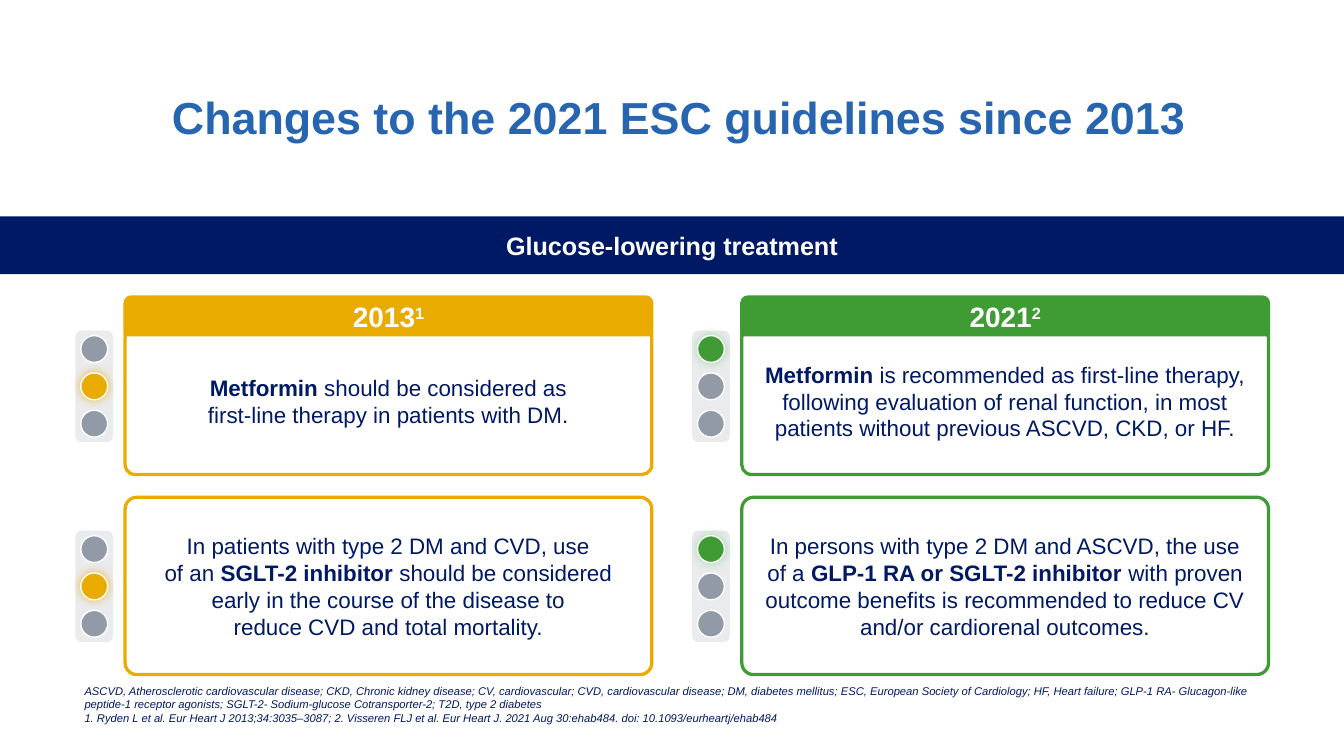
from lxml import etree
from pptx import Presentation
from pptx import util as u
from pptx.dml import color
from pptx.enum import shapes, text
from pptx.oxml import ns

Pt = u.Pt
COLORS = {
    "navy": "001965",
    "blue": "2765B0",
    "amber": "EAAB00",
    "green": "3F9C35",
    "green_glow": "93CF8D",
    "housing": "E9EBED",
    "unlit": "939AA7",
    "white": "FFFFFF",
}
CARD_RADIUS = 0.066


def rgb(name):
    return color.RGBColor.from_string(COLORS[name])


def add_form(parent, kind, box, fill, line=None, line_width=1.75):
    form = parent.add_shape(kind, *(Pt(v) for v in box))
    form.shadow.inherit = False
    form.fill.solid()
    form.fill.fore_color.rgb = rgb(fill)
    if line:
        form.line.color.rgb = rgb(line)
        form.line.width = Pt(line_width)
    else:
        form.line.fill.background()
    return form


def style(font, size, ink, bold=False, italic=False):
    font.name = "Arial"
    font.size = Pt(size)
    font.color.rgb = rgb(ink)
    font.bold = bold
    font.italic = italic


def write(form, lines, size, ink, bold=False, italic=False,
          align=text.PP_ALIGN.CENTER, anchor=text.MSO_ANCHOR.MIDDLE):
    frame = form.text_frame
    frame.word_wrap = True
    frame.vertical_anchor = anchor
    for i, line in enumerate(lines):
        paragraph = frame.add_paragraph() if i else frame.paragraphs[0]
        paragraph.alignment = align
        for j, part in enumerate(line.split("*")):
            if part:
                run = paragraph.add_run()
                run.text = part
                style(run.font, size, ink, bold or j % 2 == 1, italic)


def add_glow(lamp, glow):
    effects = lamp._element.spPr.find(ns.qn("a:effectLst"))
    shadow = etree.SubElement(effects, ns.qn("a:outerShdw"),
                              blurRad=str(Pt(5)), dist="0", dir="0",
                              algn="ctr", rotWithShape="0")
    tint = etree.SubElement(shadow, ns.qn("a:srgbClr"), val=COLORS[glow])
    etree.SubElement(tint, ns.qn("a:alpha"), val="70000")


def add_traffic_light(slide, box, lit, accent, glow):
    left, top, width, height = box
    light = slide.shapes.add_group_shape().shapes
    add_form(light, shapes.MSO_SHAPE.ROUNDED_RECTANGLE, box, "housing")
    lamp_size, pitch = 14.4, 20
    first = top + (height - 2 * pitch - lamp_size) / 2
    for i in range(3):
        lamp_box = (left + (width - lamp_size) / 2, first + i * pitch,
                    lamp_size, lamp_size)
        lamp = add_form(light, shapes.MSO_SHAPE.OVAL, lamp_box,
                        accent if i == lit else "unlit", "white", 0.75)
        if i == lit:
            add_glow(lamp, glow)


def add_card(parent, box, lines, accent):
    card = add_form(parent, shapes.MSO_SHAPE.ROUNDED_RECTANGLE, box,
                    "white", accent)
    card.adjustments[0] = CARD_RADIUS
    write(card, lines, 12, "navy")


def add_year_column(slide, box, year, reference, recommendations,
                    accent, glow, lit):
    left, top, width, height = box
    first_lines, second_lines = recommendations
    titled_card = slide.shapes.add_group_shape().shapes
    add_card(titled_card, (left, top + 16.6, width, 78.5), first_lines, accent)
    header = add_form(titled_card, shapes.MSO_SHAPE.ROUND_2_SAME_RECTANGLE,
                      (left, top, width, 20.2), accent, accent)
    write(header, [year], 15, "white", bold=True)
    mark = header.text_frame.paragraphs[0].add_run()
    mark.text = reference
    style(mark.font, 15, "white", bold=True)
    mark.font._element.set("baseline", "30000")
    add_card(slide.shapes, (left, top + height - 95, width, 95),
             second_lines, accent)
    for offset in (18, 125.2):
        add_traffic_light(slide, (left - 26.6, top + offset, 20.2, 59.8),
                          lit, accent, glow)


def add_title(slide, box):
    title = slide.shapes.add_textbox(*(Pt(v) for v in box))
    write(title, ["Changes to the 2021 ESC guidelines since 2013"], 24, "blue",
          bold=True, align=text.PP_ALIGN.LEFT, anchor=text.MSO_ANCHOR.TOP)


def add_topic_band(slide, box):
    band = add_form(slide.shapes, shapes.MSO_SHAPE.RECTANGLE, box, "navy")
    write(band, ["Glucose-lowering treatment"], 13.5, "white", bold=True)


def add_footnotes(slide, box):
    footnotes = slide.shapes.add_textbox(*(Pt(v) for v in box))
    write(footnotes, [
        "ASCVD, Atherosclerotic cardiovascular disease; CKD, Chronic kidney "
        "disease; CV, cardiovascular; CVD, cardiovascular disease; DM, diabetes "
        "mellitus; ESC, European Society of Cardiology; HF, Heart failure; "
        "GLP-1 RA- Glucagon-like peptide-1 receptor agonists; SGLT-2- "
        "Sodium-glucose Cotransporter-2; T2D, type 2 diabetes",
        "1. Ryden L et al. Eur Heart J 2013;34:3035‒3087; 2. Visseren FLJ et al. "
        "Eur Heart J. 2021 Aug 30:ehab484. doi: 10.1093/eurheartj/ehab484",
    ], 6, "navy", italic=True, align=text.PP_ALIGN.LEFT,
        anchor=text.MSO_ANCHOR.BOTTOM)


def main():
    deck = Presentation()
    deck.slide_width, deck.slide_height = Pt(720), Pt(405)
    slide = deck.slides.add_slide(deck.slide_layouts[6])
    add_title(slide, (85, 44.6, 635, 36))
    add_topic_band(slide, (0, 115.9, 720, 31))
    add_year_column(slide, (67, 159.1, 282.2, 202.3), "2013", "1", (
        ["*Metformin* should be considered as",
         "first-line therapy in patients with DM."],
        ["In patients with type 2 DM and CVD, use",
         "of an *SGLT-2 inhibitor* should be considered",
         "early in the course of the disease to",
         "reduce CVD and total mortality."],
    ), "amber", "amber", 1)
    add_year_column(slide, (397.4, 159.1, 282.2, 202.3), "2021", "2", (
        ["*Metformin* is recommended as first-line therapy, following "
         "evaluation of renal function, in most patients without previous "
         "ASCVD, CKD, or HF."],
        ["In persons with type 2 DM and ASCVD, the use of a *GLP-1 RA or "
         "SGLT-2 inhibitor* with proven outcome benefits is recommended to "
         "reduce CV and/or cardiorenal outcomes."],
    ), "green", "green_glow", 0)
    add_footnotes(slide, (38.2, 372.2, 643.7, 19.4))
    deck.save("out.pptx")


if __name__ == "__main__":
    main()
